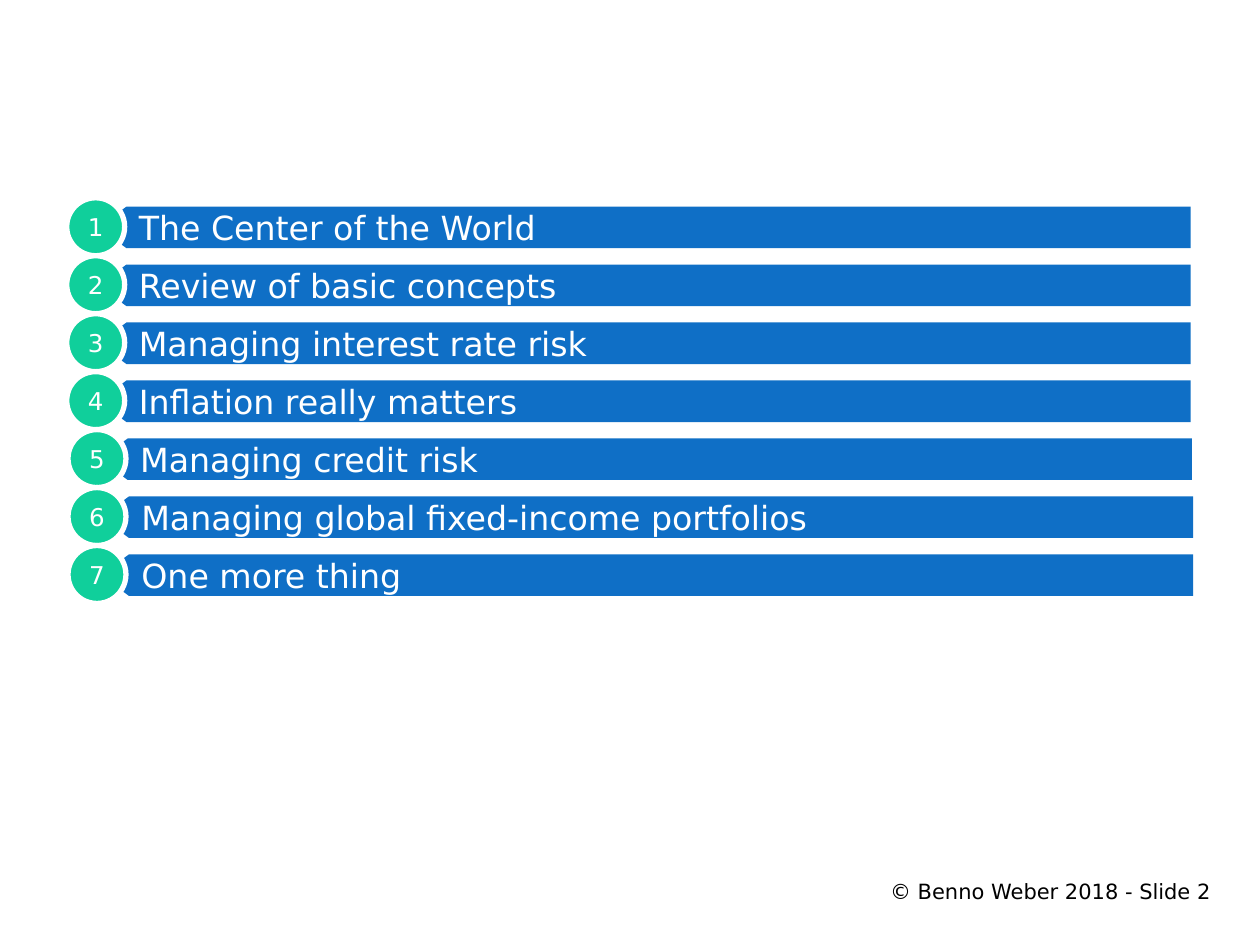
import pptx
import pptx.util
import pptx.dml.color
import pptx.enum.shapes
import pptx.enum.text

Inches = pptx.util.Inches
Shape = pptx.enum.shapes.MSO_SHAPE
Align = pptx.enum.text.PP_ALIGN
Anchor = pptx.enum.text.MSO_ANCHOR
RGBColor = pptx.dml.color.RGBColor

BLUE = RGBColor(0x0F, 0x6F, 0xC6)
GREEN = RGBColor(0x10, 0xCF, 0x9B)
WHITE = RGBColor(0xFF, 0xFF, 0xFF)
BLACK = RGBColor(0, 0, 0)

# Topic, bar left, circle left
TOPICS = [
    ("The Center of the World", 0.78, 0.53),
    ("Review of basic concepts", 0.78, 0.53),
    ("Managing interest rate risk", 0.78, 0.53),
    ("Inflation really matters", 0.78, 0.53),
    ("Managing credit risk", 0.79, 0.54),
    ("Managing global fixed-income portfolios", 0.8, 0.54),
    ("One more thing", 0.8, 0.54),
]
TOP = 1.57
STEP = 0.46


def write(shape, text, size, color, align, side, edge):
    """Fill the text frame with one run; side and edge are its insets."""
    frame = shape.text_frame
    frame.word_wrap = True
    frame.margin_left = frame.margin_right = Inches(side)
    frame.margin_top = frame.margin_bottom = Inches(edge)
    para = frame.paragraphs[0]
    para.alignment = align
    run = para.add_run()
    run.text = text
    run.font.name = "DejaVu Sans"
    run.font.size = pptx.util.Pt(size)
    run.font.color.rgb = color


def draw(kind, left, top, width, height, fill):
    shape = slide.shapes.add_shape(
        kind, Inches(left), Inches(top), Inches(width), Inches(height))
    shape.shadow.inherit = False
    shape.fill.solid()
    shape.fill.fore_color.rgb = fill
    shape.text_frame.vertical_anchor = Anchor.MIDDLE
    return shape


deck = pptx.Presentation()
deck.slide_width = Inches(10)
deck.slide_height = Inches(7.5)
slide = deck.slides.add_slide(deck.slide_layouts[6])

footer = slide.shapes.add_textbox(
    Inches(5.45), Inches(6.89), Inches(4.24), Inches(0.36))
write(footer, "© Benno Weber 2018 - Slide 2", 12, BLACK, Align.RIGHT, 0.08, 0.08)

for i, (topic, left, edge) in enumerate(TOPICS):
    top = TOP + i * STEP

    bar = draw(Shape.LEFT_ARROW, left, top + 0.07, 8.67, 0.33, BLUE)
    bar.adjustments[0] = 1
    bar.adjustments[1] = 0.68
    bar.line.fill.background()
    write(bar, topic, 19, WHITE, Align.LEFT, 0.1, 0)

    disc = draw(Shape.OVAL, edge, top, 0.46, 0.46, GREEN)
    disc.line.color.rgb = WHITE
    disc.line.width = pptx.util.Pt(3)
    write(disc, str(i + 1), 14, WHITE, Align.CENTER, 0, 0)

deck.save("out.pptx")
